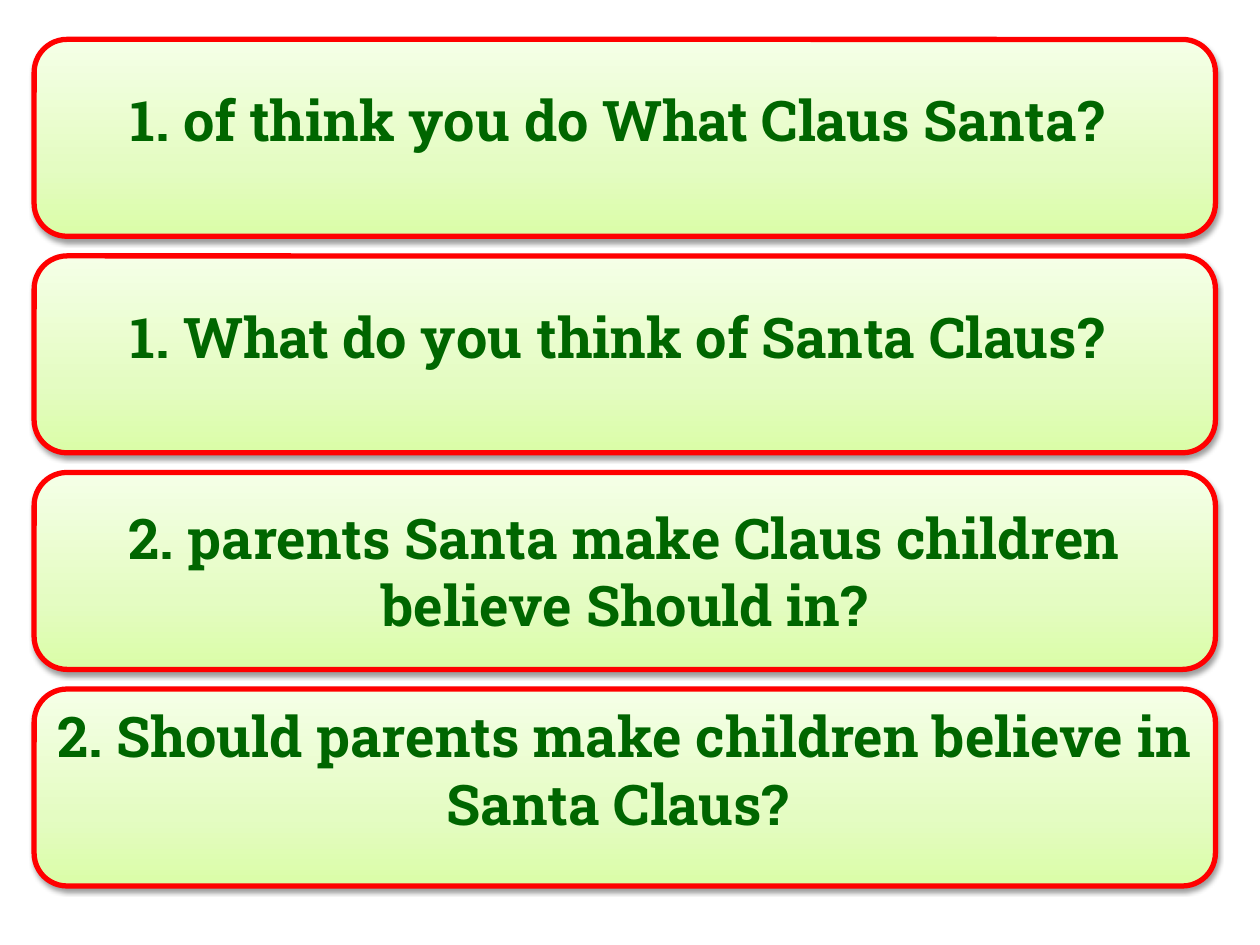
from copy import deepcopy

from pptx import Presentation
from pptx.dml.color import RGBColor
from pptx.enum.shapes import MSO_SHAPE
from pptx.enum.text import MSO_ANCHOR, PP_ALIGN
from pptx.oxml import parse_xml
from pptx.oxml.ns import nsdecls, qn
from pptx.util import Pt

ROUND = MSO_SHAPE.ROUNDED_RECTANGLE
MIDDLE = MSO_ANCHOR.MIDDLE
CENTER = PP_ALIGN.CENTER

RED = RGBColor(0xFF, 0x00, 0x00)
GREEN = RGBColor(0x00, 0x66, 0x00)
LIME = RGBColor(0xDA, 0xFD, 0xA7)
MINT = RGBColor(0xE4, 0xFC, 0xC2)
PALE = RGBColor(0xF5, 0xFF, 0xE7)
STOPS = [(0, LIME), (0.35, MINT), (1, PALE)]

LEFT, TOP, WIDTH, HEIGHT, STEP = 19.5, 22.5, 675, 112.5, 123.75
INSET = 3.6
LIFT = 21  # extra bottom inset that raises the text

# The trailing spaces count in the centring of the line.
CARDS = [
    ("1. of think you do What Claus Santa? ", LIFT),
    ("1. What do you think of Santa Claus? ", LIFT),
    ("2. parents Santa make Claus children believe Should in?", 0),
    ("2. Should parents make children believe in Santa Claus? ", LIFT),
]


def write(frame, text, font="Roboto Slab", size=32, color=GREEN, bold=True,
          align=CENTER):
    para = frame.paragraphs[0]
    para.alignment = align
    run = para.add_run()
    run.text = text
    run.font.name = font
    run.font.size = Pt(size)
    run.font.bold = bold
    run.font.color.rgb = color


def shade(shape):
    """Fill with the three-stop gradient, running from bottom to top."""
    fill = shape.fill
    fill.gradient()
    fill.gradient_angle = 90
    stops = shape._element.spPr.find(qn("a:gradFill")).find(qn("a:gsLst"))
    stops.append(deepcopy(stops[-1]))
    for stop, (place, color) in zip(fill.gradient_stops, STOPS):
        stop.position = place
        stop.color.rgb = color


def drop(shape):
    """Cast a soft shadow straight down."""
    shape.shadow.inherit = False
    effects = shape._element.spPr.find(qn("a:effectLst"))
    effects.append(parse_xml(
        f'<a:outerShdw {nsdecls("a")} blurRad="{Pt(3.1)}" dist="{Pt(1.6)}" '
        'dir="5400000" rotWithShape="0"><a:srgbClr val="000000">'
        '<a:alpha val="38000"/></a:srgbClr></a:outerShdw>'))


class Deck:
    def __init__(self):
        self.file = Presentation()
        self.file.slide_width = Pt(720)
        self.file.slide_height = Pt(540)
        self.slide = self.file.slides.add_slide(self.file.slide_layouts[6])

    def card(self, top, text, lift):
        shape = self.slide.shapes.add_shape(
            ROUND, Pt(LEFT), Pt(top), Pt(WIDTH), Pt(HEIGHT))
        shade(shape)
        shape.line.color.rgb = RED
        shape.line.width = Pt(3)
        drop(shape)
        frame = shape.text_frame
        frame.word_wrap = True
        frame.vertical_anchor = MIDDLE
        frame.margin_top = Pt(INSET)
        frame.margin_bottom = Pt(INSET + lift)
        write(frame, text)


def main():
    deck = Deck()
    for row, (text, lift) in enumerate(CARDS):
        deck.card(TOP + row * STEP, text, lift)
    deck.file.save("out.pptx")


if __name__ == "__main__":
    main()
